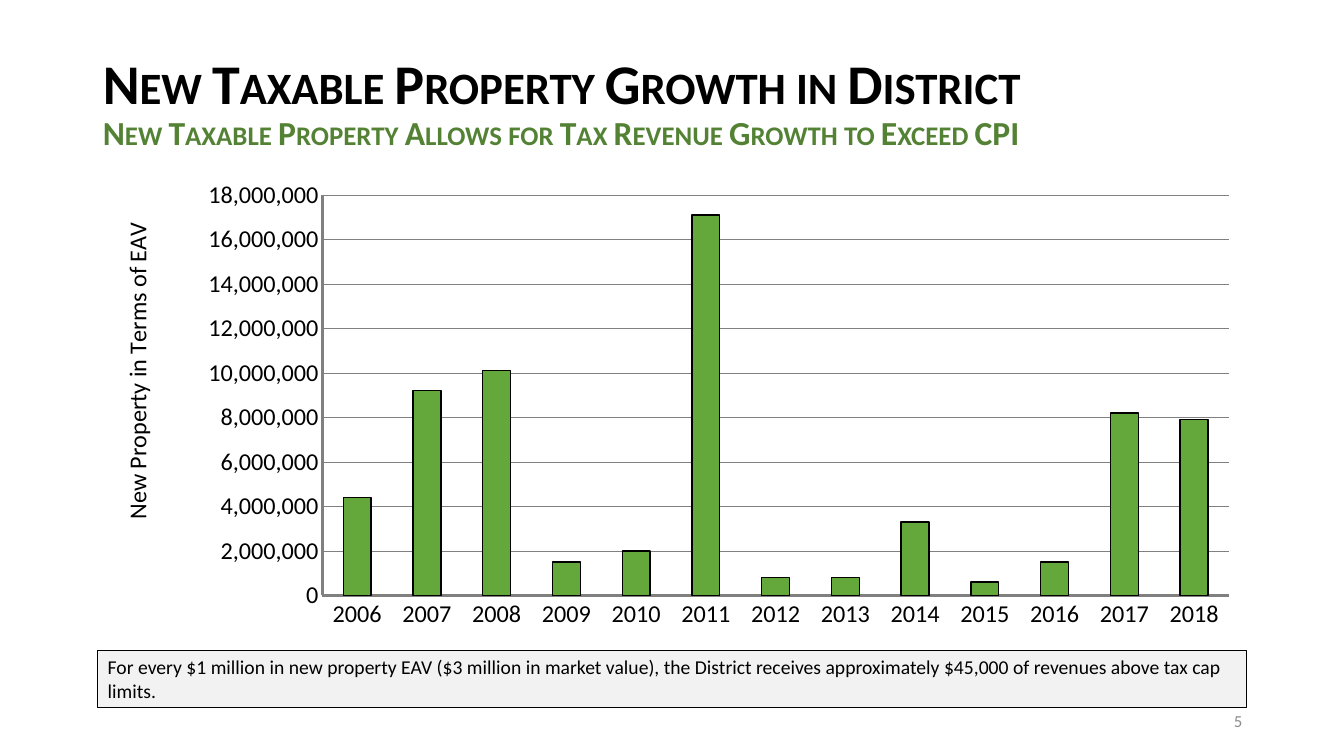
from lxml import etree
from pptx import Presentation
from pptx.chart.data import CategoryChartData
from pptx.dml.color import RGBColor
from pptx.enum import chart as charts, shapes, text
from pptx.oxml.ns import qn
from pptx.util import Inches, Pt

FONT = "Calibri"
COLORS = {"black": "000000", "heading": "548235", "bar": "64A73B",
          "axis": "808080", "note": "F2F2F2", "number": "8C8C8C"}

TITLE = "New Taxable Property Growth in District"
SUBTITLE = "New Taxable Property Allows for Tax Revenue Growth to Exceed CPI"
AXIS_TITLE = "New Property in Terms of EAV"
NOTE = ("For every $1 million in new property EAV ($3 million in market value), the District "
        "receives approximately $45,000 of revenues above tax cap limits.")
PAGE_NUMBER = "5"
FIRST_YEAR = 2006
NEW_PROPERTY = [4400000, 9200000, 10100000, 1500000, 2000000, 17100000, 800000,
                800000, 3300000, 600000, 1500000, 8200000, 7900000]

TITLE_BOX = (0.92, 0.4, 11.5, 1.27)
CHART_BOX = (0.92, 1.75, 11.5, 4.62)
NOTE_BOX = (0.97, 6.45, 11.39, 0.57)
NUMBER_BOX = (9.42, 6.95, 3, 0.4)


def color(name):
    return RGBColor.from_string(COLORS[name])


def inches(box):
    return [Inches(length) for length in box]


def style_font(font, size, color_name, bold=False):
    font.name, font.size, font.bold = FONT, Pt(size), bold
    font.color.rgb = color(color_name)


def add_span(para, words, size, color_name, bold=False):
    span = para.add_run()
    span.text = words
    style_font(span.font, size, color_name, bold)
    return span


def style_line(line, color_name, width):
    line.color.rgb = color(color_name)
    line.width = Pt(width)


def set_layout(parent, index, settings):
    """Place a chart part by hand, as fractions of the chart area."""
    for old in parent.findall(qn("c:layout")):
        parent.remove(old)
    layout = etree.Element(qn("c:layout"))
    manual = etree.SubElement(layout, qn("c:manualLayout"))
    for tag, value in settings:
        etree.SubElement(manual, qn("c:" + tag)).set("val", str(value))
    parent.insert(index, layout)


def add_title(page):
    title = page.shapes.title
    title.left, title.top, title.width, title.height = inches(TITLE_BOX)
    frame = title.text_frame
    frame.word_wrap = True
    frame.vertical_anchor = text.MSO_ANCHOR.MIDDLE
    para = frame.paragraphs[0]
    para.alignment = text.PP_ALIGN.LEFT
    para.line_spacing = 0.9
    heading = add_span(para, TITLE, 40, "black", True)
    para.add_line_break()
    subheading = add_span(para, SUBTITLE, 24, "heading", True)
    for span in (heading, subheading):
        span.font._element.set("cap", "small")


def add_growth_chart(page):
    data = CategoryChartData(number_format="#,##0")
    data.categories = [str(FIRST_YEAR + i) for i in range(len(NEW_PROPERTY))]
    data.add_series("Series 1", NEW_PROPERTY)
    chart = page.shapes.add_chart(charts.XL_CHART_TYPE.COLUMN_CLUSTERED,
                                  *inches(CHART_BOX), data).chart
    chart.has_legend = chart.has_title = False
    style_font(chart.font, 17.3, "black")

    plot = chart.plots[0]
    plot.gap_width = 150
    plot.vary_by_categories = False
    bars = plot.series[0].format
    bars.fill.solid()
    bars.fill.fore_color.rgb = color("bar")
    style_line(bars.line, "black", 0.96)

    years, amounts = chart.category_axis, chart.value_axis
    for axis in (years, amounts):
        axis.major_tick_mark = axis.minor_tick_mark = charts.XL_TICK_MARK.NONE
        style_line(axis.format.line, "axis", 1.92)
    amounts.minimum_scale, amounts.maximum_scale = 0, 18000000
    amounts.major_unit = 2000000
    amounts.tick_labels.number_format = "#,##0"
    amounts.tick_labels.number_format_is_linked = False
    style_line(amounts.major_gridlines.format.line, "axis", 0.25)
    add_span(amounts.axis_title.text_frame.paragraphs[0], AXIS_TITLE, 17.3, "black")

    set_layout(amounts.axis_title._element, 1,
               [("xMode", "edge"), ("yMode", "edge"), ("x", 0.02), ("y", 0.09)])
    set_layout(chart._chartSpace.chart.plotArea, 0,
               [("layoutTarget", "inner"), ("xMode", "edge"), ("yMode", "edge"),
                ("x", 0.198), ("y", 0.04), ("w", 0.782), ("h", 0.86)])


def add_note(page):
    box = page.shapes.add_shape(shapes.MSO_SHAPE.RECTANGLE, *inches(NOTE_BOX))
    box.shadow.inherit = False
    box.fill.solid()
    box.fill.fore_color.rgb = color("note")
    style_line(box.line, "black", 0.75)
    frame = box.text_frame
    frame.word_wrap = True
    frame.auto_size = text.MSO_AUTO_SIZE.SHAPE_TO_FIT_TEXT
    frame.vertical_anchor = text.MSO_ANCHOR.TOP
    para = frame.paragraphs[0]
    para.alignment = text.PP_ALIGN.LEFT
    add_span(para, NOTE, 14, "black")


def add_page_number(page):
    frame = page.shapes.add_textbox(*inches(NUMBER_BOX)).text_frame
    frame.word_wrap = True
    frame.vertical_anchor = text.MSO_ANCHOR.MIDDLE
    para = frame.paragraphs[0]
    para.alignment = text.PP_ALIGN.RIGHT
    add_span(para, PAGE_NUMBER, 12, "number")


def main():
    deck = Presentation()
    deck.slide_width, deck.slide_height = Inches(13.33), Inches(7.5)
    page = deck.slides.add_slide(deck.slide_layouts.get_by_name("Title Only"))
    add_title(page)
    add_growth_chart(page)
    add_note(page)
    add_page_number(page)
    deck.save("out.pptx")


if __name__ == "__main__":
    main()
